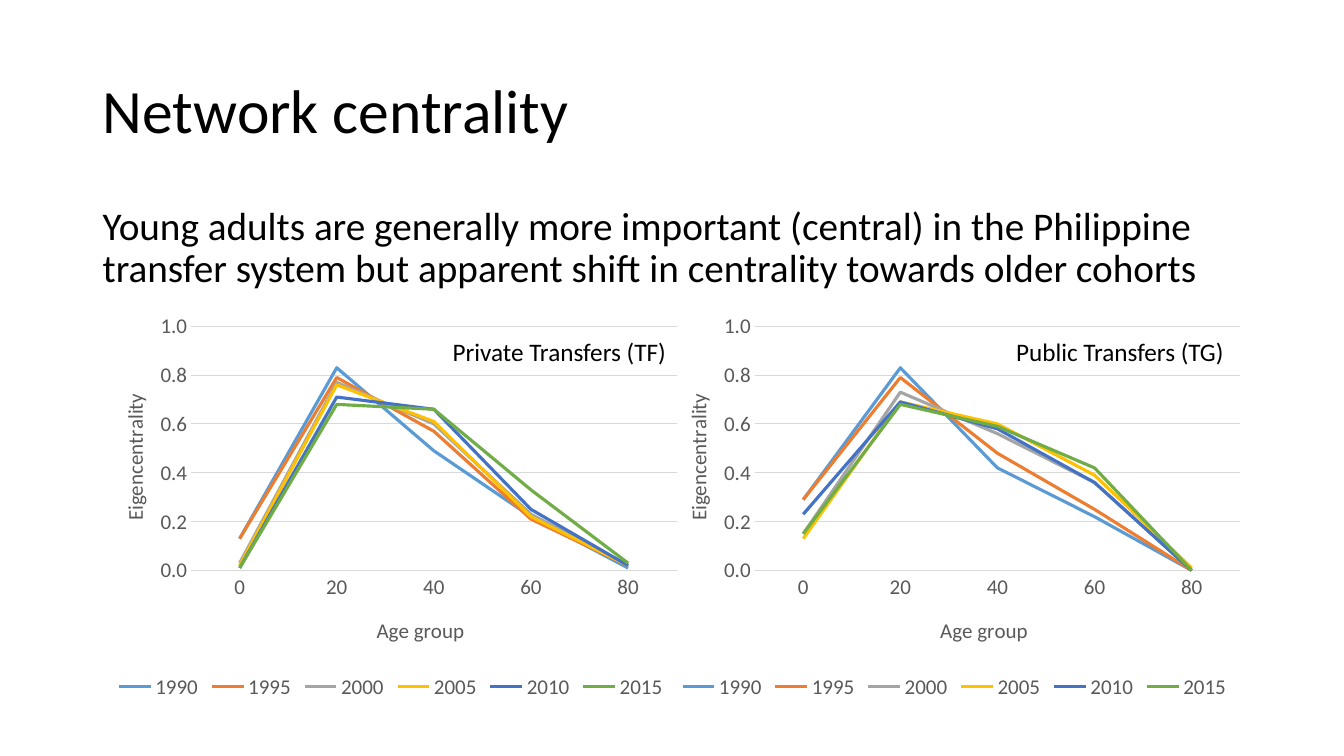
from dataclasses import dataclass

from lxml import etree
from pptx import Presentation
from pptx import util as u
from pptx.chart import data as chart_data
from pptx.dml.color import RGBColor
from pptx.enum import chart as ch, text
from pptx.oxml.ns import qn


@dataclass(frozen=True)
class Theme:
    font: str = "Calibri"
    ink: str = "000000"
    muted: str = "595959"
    grid: str = "D9D9D9"
    lines: tuple = ("5B9BD5", "ED7D31", "A5A5A5", "FFC000", "4472C4", "70AD47")
    title: float = 44
    body: float = 28
    label: float = 18
    chart: float = 15
    hairline: float = 0.75
    curve: float = 2.25


THEME = Theme()
WIDTH, HEIGHT = 13.33, 7.5
MARGIN = 0.92
CONTENT = 11.5
CHART_WIDTH, CHART_HEIGHT = 5.91, 3.94
CHART_TOP = 3.04
AGES = ("0", "20", "40", "60", "80")
YEARS = ("1990", "1995", "2000", "2005", "2010", "2015")

PRIVATE = (
    (0.13, 0.83, 0.49, 0.22, 0.01),
    (0.13, 0.79, 0.57, 0.21, 0.02),
    (0.03, 0.77, 0.6, 0.23, 0.02),
    (0.02, 0.76, 0.61, 0.22, 0.02),
    (0.01, 0.71, 0.66, 0.25, 0.02),
    (0.01, 0.68, 0.66, 0.33, 0.03),
)
PUBLIC = (
    (0.29, 0.83, 0.42, 0.22, 0),
    (0.29, 0.79, 0.48, 0.25, 0),
    (0.15, 0.73, 0.56, 0.36, 0),
    (0.13, 0.69, 0.6, 0.39, 0.01),
    (0.23, 0.69, 0.58, 0.36, 0),
    (0.15, 0.68, 0.59, 0.42, 0),
)


def style_font(font, size, colour):
    font.name = THEME.font
    font.size = u.Pt(size)
    font.bold = False
    font.color.rgb = RGBColor.from_string(colour)


def style_line(line, colour, width):
    line.color.rgb = RGBColor.from_string(colour)
    line.width = u.Pt(width)


def write(frame, words, size, colour=THEME.ink):
    para = frame.paragraphs[0]
    span = para.add_run()
    span.text = words
    style_font(span.font, size, colour)
    return para


def add_text(page, box, words, size):
    shape = page.shapes.add_textbox(*map(u.Inches, box))
    shape.text_frame.word_wrap = True
    return write(shape.text_frame, words, size)


def set_layout(parent, inner=False, **shares):
    """Fix a chart part at shares of the chart's size."""
    for old in parent.findall(qn("c:layout")):
        parent.remove(old)
    layout = etree.Element(qn("c:layout"))
    manual = etree.SubElement(layout, qn("c:manualLayout"))
    if inner:
        etree.SubElement(manual, qn("c:layoutTarget")).set("val", "inner")
    for name in ("xMode", "yMode"):
        etree.SubElement(manual, qn(f"c:{name}")).set("val", "edge")
    for name, share in shares.items():
        etree.SubElement(manual, qn(f"c:{name}")).set("val", str(share))
    parent.insert(0 if parent.find(qn("c:tx")) is None else 1, layout)


def format_axis(axis, title):
    axis.major_tick_mark = axis.minor_tick_mark = ch.XL_TICK_MARK.NONE
    style_font(axis.tick_labels.font, THEME.chart, THEME.muted)
    write(axis.axis_title.text_frame, title, THEME.chart, THEME.muted)


# Heading and message
def add_heading(page, box, title, message):
    left, top, width, height = box
    heading = page.shapes.title
    heading.left, heading.top = u.Inches(left), u.Inches(top)
    heading.width, heading.height = u.Inches(width), u.Inches(height)
    heading.text_frame.vertical_anchor = text.MSO_ANCHOR.MIDDLE
    para = write(heading.text_frame, title, THEME.title)
    para.alignment = text.PP_ALIGN.LEFT
    para.line_spacing = 0.9

    para = add_text(page, (left, 2, width, 1), message, THEME.body)
    para.line_spacing = 0.9
    para.space_before = u.Pt(10)


# One line chart with its label
def add_centrality_chart(page, box, label, rows):
    left, top, width, height = box
    data = chart_data.CategoryChartData(number_format="0.00")
    data.categories = AGES
    for year, values in zip(YEARS, rows):
        data.add_series(year, values)
    chart = page.shapes.add_chart(
        ch.XL_CHART_TYPE.LINE, *map(u.Inches, box), data).chart
    chart.has_title = False
    style_font(chart.font, THEME.chart, THEME.ink)

    # Curves
    plot = chart.plots[0]
    plot.vary_by_categories = False
    for series, colour in zip(plot.series, THEME.lines):
        series.smooth = False
        series.marker.style = ch.XL_MARKER_STYLE.NONE
        style_line(series.format.line, colour, THEME.curve)

    # Axes
    ages, scores = chart.category_axis, chart.value_axis
    format_axis(ages, "Age group")
    format_axis(scores, "Eigencentrality")
    style_line(ages.format.line, THEME.grid, THEME.hairline)
    scores.format.line.fill.background()
    scores.minimum_scale, scores.maximum_scale = 0, 1
    scores.major_unit = 0.2
    scores.tick_labels.number_format = "0.0"
    scores.tick_labels.number_format_is_linked = False
    style_line(scores.major_gridlines.format.line, THEME.grid, THEME.hairline)

    # Legend
    chart.has_legend = True
    chart.legend.position = ch.XL_LEGEND_POSITION.BOTTOM
    chart.legend.include_in_layout = False
    style_font(chart.legend.font, THEME.chart, THEME.muted)

    # Places inside the chart
    root = chart.element
    age_title = root.xpath(".//c:catAx/c:title")[0]
    score_title = root.xpath(".//c:valAx/c:title")[0]
    score_title.find(".//" + qn("a:bodyPr")).set("rot", "-5400000")
    set_layout(root.xpath(".//c:plotArea")[0], inner=True,
               x=0.165, y=0.05, w=0.815, h=0.615)
    set_layout(age_title, x=0.47, y=0.77)
    set_layout(score_title, x=0.04, y=0.21)

    add_text(page, (left + 3.47, top + 0.25, 3.4, 0.4), label, THEME.label)


def build_slide(deck):
    page = deck.slides.add_slide(deck.slide_layouts[5])
    add_heading(
        page, (MARGIN, 0.4, CONTENT, 1.45), "Network centrality",
        "Young adults are generally more important (central) in the Philippine "
        "transfer system but apparent shift in centrality towards older cohorts")
    panels = (("Private Transfers (TF)", PRIVATE),
              ("Public Transfers (TG)", PUBLIC))
    step = CONTENT - CHART_WIDTH
    for column, (label, rows) in enumerate(panels):
        box = (MARGIN + column * step, CHART_TOP, CHART_WIDTH, CHART_HEIGHT)
        add_centrality_chart(page, box, label, rows)


def main():
    deck = Presentation()
    deck.slide_width, deck.slide_height = u.Inches(WIDTH), u.Inches(HEIGHT)
    build_slide(deck)
    deck.save("out.pptx")


if __name__ == "__main__":
    main()
